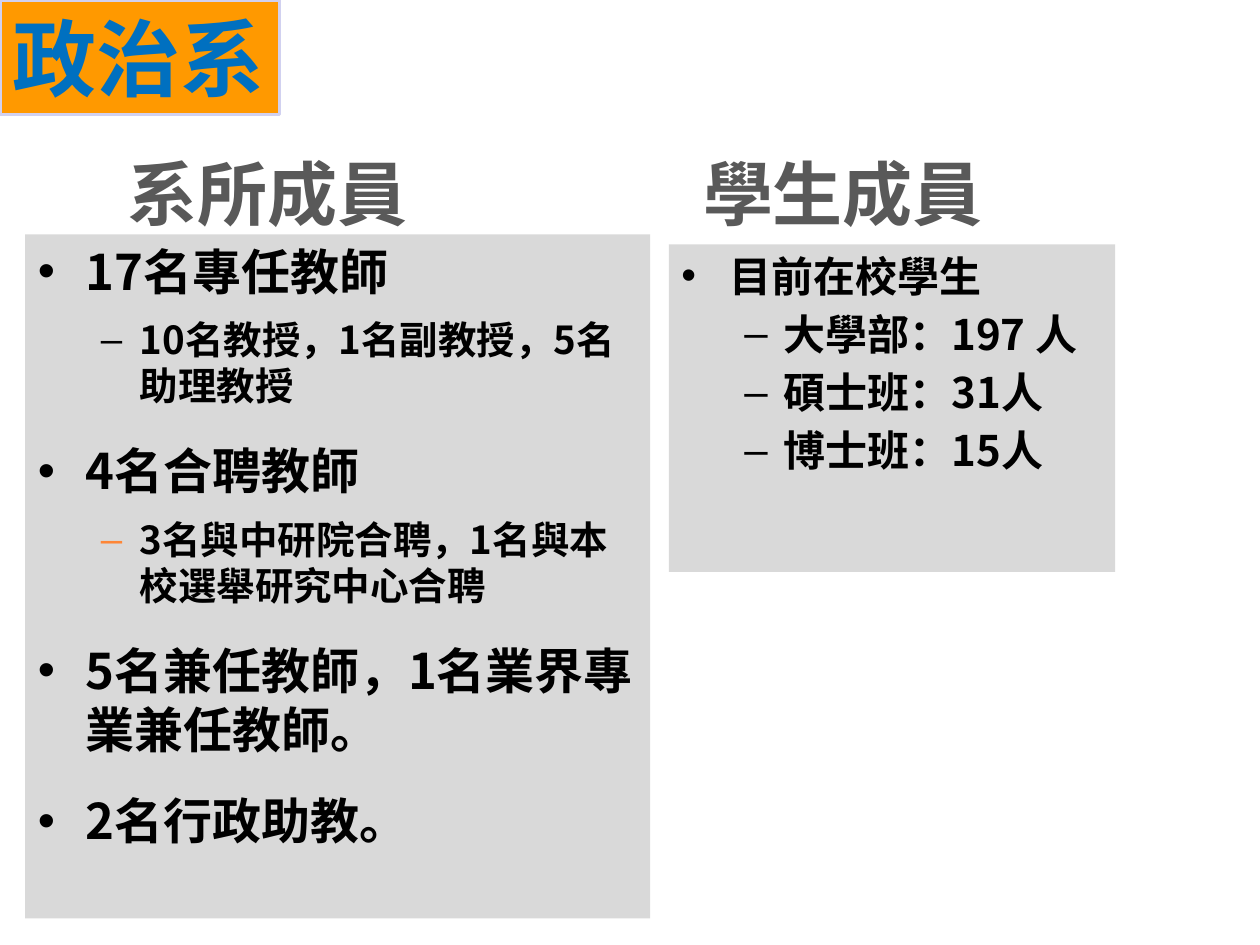
"""Build the slide on the members of the politics department."""
from lxml import etree
from pptx import Presentation
from pptx.dml import color
from pptx.enum import text
from pptx.oxml import ns
from pptx.util import Inches, Pt

HUES = dict(ink="000000", head="595959", panel="D9D9D9", tag="FF9900",
            edge="D1D1F0", name="0070C0", dash="FE8637")
SANS = "Noto Sans CJK SC"
NAME = "政治系"
HEADS = ["系所成員", "學生成員"]
# level, wording, size, line pitch, space before, bullet hue
STAFF = [
    (0, "17名專任教師", 28, 34, 0, "ink"),
    (1, "10名教授，1名副教授，5名助理教授", 22, 26.5, 9, "ink"),
    (0, "4名合聘教師", 28, 34, 18, "ink"),
    (1, "3名與中研院合聘，1名與本校選舉研究中心合聘", 22, 26.5, 9, "dash"),
    (0, "5名兼任教師，1名業界專業兼任教師。", 28, 34, 18, "ink"),
    (0, "2名行政助教。", 28, 34, 18, "ink"),
]
PUPILS = [(0, "目前在校學生", 24, 28.5, 0, "ink")] + [
    (1, line, 24, 28.5, 4.8, "ink")
    for line in ("大學部：197 人", "碩士班：31人", "博士班：15人")]
BULLETS = [("•", 0.38, -0.38), ("–", 0.81, -0.31)]


def rgb(key):
    return color.RGBColor.from_string(HUES[key])


def place(shape, left, top, width, height):
    shape.left, shape.top = Inches(left), Inches(top)
    shape.width, shape.height = Inches(width), Inches(height)
    frame = shape.text_frame
    frame.word_wrap = True
    frame.auto_size = text.MSO_AUTO_SIZE.NONE
    return frame


def paint(shape, key):
    shape.fill.solid()
    shape.fill.fore_color.rgb = rgb(key)


def write(para, words, size, key, face=SANS):
    run = para.add_run()
    run.text = words
    font = run.font
    font.size, font.bold, font.name = Pt(size), True, face
    font.color.rgb = rgb(key)
    east = etree.SubElement(run._r.get_or_add_rPr(), ns.qn("a:ea"))
    east.set("typeface", face)


def mark(para, level, key):
    char, left, indent = BULLETS[level]
    props = para._p.get_or_add_pPr()
    props.set("marL", str(Inches(left)))
    props.set("indent", str(Inches(indent)))
    tint = etree.SubElement(props, ns.qn("a:buClr"))
    etree.SubElement(tint, ns.qn("a:srgbClr")).set("val", HUES[key])
    etree.SubElement(props, ns.qn("a:buFont")).set("typeface", "Arial")
    etree.SubElement(props, ns.qn("a:buChar")).set("char", char)


def head(shape, words, left):
    frame = place(shape, left, 1.07, 3.54, 0.91)
    frame.vertical_anchor = text.MSO_ANCHOR.MIDDLE
    para = frame.paragraphs[0]
    para.alignment = text.PP_ALIGN.CENTER
    write(para, words, 40, "head")


def panel(shape, rows, *box):
    frame = place(shape, *box)
    paint(shape, "panel")
    for i, (level, words, size, pitch, before, key) in enumerate(rows):
        para = frame.add_paragraph() if i else frame.paragraphs[0]
        mark(para, level, key)
        para.level = level
        para.line_spacing, para.space_before = Pt(pitch), Pt(before)
        write(para, words, size, "ink")


def label(shape):
    frame = place(shape, 0, 0, 2.22, 0.91)
    frame.word_wrap = False
    paint(shape, "tag")
    shape.line.color.rgb = rgb("edge")
    shape.line.width = Pt(2)
    para = frame.paragraphs[0]
    para.line_spacing = Pt(58)
    write(para, NAME, 48, "name", "Arial")


def main():
    deck = Presentation()
    deck.slide_width, deck.slide_height = Inches(10), Inches(7.5)
    slide = deck.slides.add_slide(deck.slide_layouts[1])
    shapes = slide.shapes

    def box():
        return shapes.add_textbox(0, 0, 0, 0)

    head(shapes.title, HEADS[0], 0.35)
    panel(slide.placeholders[1], STAFF, 0.2, 1.86, 4.96, 5.43)
    label(box())
    head(box(), HEADS[1], 4.92)
    panel(box(), PUPILS, 5.31, 1.94, 3.54, 2.6)
    deck.save("out.pptx")


if __name__ == "__main__":
    main()
